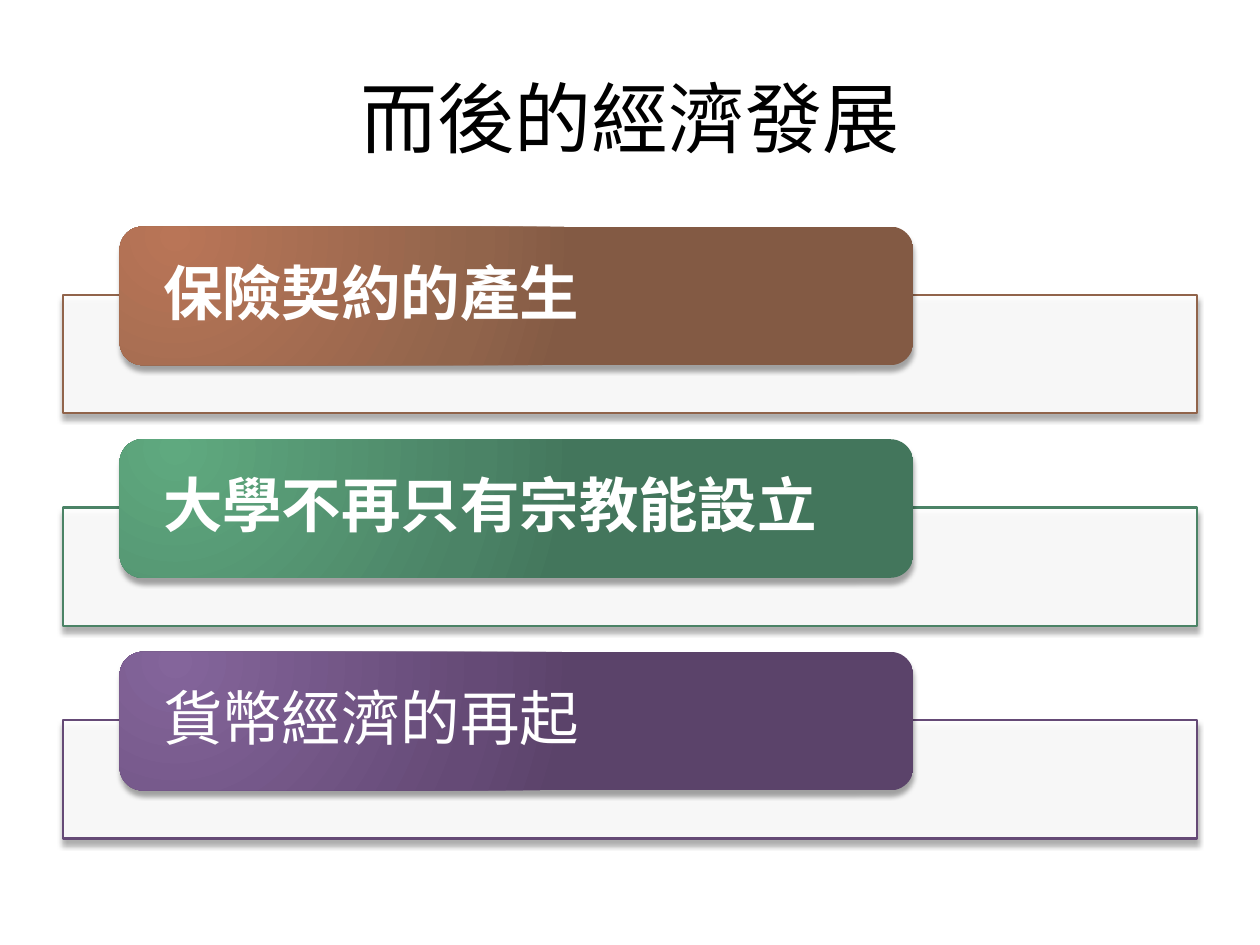
from pptx import Presentation
from pptx.dml.color import RGBColor
from pptx.enum.shapes import MSO_SHAPE
from pptx.enum.text import MSO_ANCHOR, PP_ALIGN
from pptx.oxml import parse_xml
from pptx.oxml.ns import nsdecls, qn
from pptx.util import Pt

RECT, ROUND = MSO_SHAPE.RECTANGLE, MSO_SHAPE.ROUNDED_RECTANGLE
MIDDLE = MSO_ANCHOR.MIDDLE
LEFT, CENTER = PP_ALIGN.LEFT, PP_ALIGN.CENTER
NS = nsdecls("a")
LABEL_FONT = "Noto Sans CJK SC"

TITLE = "而後的經濟發展"
ITEMS = [
    ("保險契約的產生", True, ("B97557", "91644B", "835A44")),
    ("大學不再只有宗教能設立", True, ("5FA97F", "4B8366", "43765C")),
    ("貨幣經濟的再起", False, ("84659B", "654A76", "5B436A")),
]
STOPS = (0, 76, 100)
MARGIN, WIDTH = 36, 648
CARD_LEFT, CARD_TOP, CARD_W, CARD_H = 68.4, 129.5, 453.6, 79.2
BAR_DROP, BAR_H = 39, 67.7
PITCH = 121.5


def rgb(value):
    return RGBColor.from_string(value)


def add_box(s, kind, left, top, width, height):
    sp = s.shapes.add_shape(kind, Pt(left), Pt(top), Pt(width), Pt(height))
    sp.shadow.inherit = False
    sp._element.spPr.find(qn("a:effectLst")).append(parse_xml(
        f'<a:outerShdw {NS} blurRad="{Pt(3)}" dist="{Pt(3)}" dir="5400000" rotWithShape="0">'
        '<a:srgbClr val="000000"><a:alpha val="35000"/></a:srgbClr></a:outerShdw>'))
    return sp


def add_bar(s, top, color):
    sp = add_box(s, RECT, MARGIN, top, WIDTH, BAR_H)
    sp.fill.solid()
    sp.fill.fore_color.rgb = rgb("FFFFFF")
    fill_color = sp._element.spPr.find(qn("a:solidFill"))[0]
    fill_color.append(parse_xml(f'<a:alpha {NS} val="90000"/>'))
    sp.line.color.rgb = rgb(color)
    sp.line.width = Pt(1.25)


def set_radial_fill(sp, colors):
    stops = "".join(
        f'<a:gs pos="{pos * 1000}"><a:srgbClr val="{color}"/></a:gs>'
        for pos, color in zip(STOPS, colors))
    sp.fill.background()
    spPr = sp._element.spPr
    spPr.replace(spPr.find(qn("a:noFill")), parse_xml(
        f'<a:gradFill {NS} rotWithShape="1"><a:gsLst>{stops}</a:gsLst>'
        '<a:path path="circle"><a:fillToRect l="15000" t="15000" r="100000" b="100000"/>'
        '</a:path></a:gradFill>'))


def write(sp, text, size, color, font, align, bold=False):
    tf = sp.text_frame
    tf.word_wrap = True
    tf.vertical_anchor = MIDDLE
    p = tf.paragraphs[0]
    p.alignment = align
    p.font.size = Pt(size)
    p.font.name = font
    p.font.bold = bold
    p.font.color.rgb = rgb(color)
    p.add_run().text = text
    return tf


def add_card(s, top, text, bold, colors):
    sp = add_box(s, ROUND, CARD_LEFT, top, CARD_W, CARD_H)
    set_radial_fill(sp, colors)
    sp.line.fill.background()
    tf = write(sp, text, 34, "FFFFFF", LABEL_FONT, LEFT, bold)
    tf.margin_left = tf.margin_right = Pt(21)
    tf.margin_top = tf.margin_bottom = 0
    tf.paragraphs[0].line_spacing = 0.9


prs = Presentation()
prs.slide_width, prs.slide_height = Pt(720), Pt(540)
s = prs.slides.add_slide(prs.slide_layouts[6])

title = s.shapes.add_textbox(Pt(MARGIN), Pt(21.6), Pt(WIDTH), Pt(90))
write(title, TITLE, 44, "000000", "Calibri", CENTER)

for i, (text, bold, colors) in enumerate(ITEMS):
    top = CARD_TOP + i * PITCH
    add_bar(s, top + BAR_DROP, colors[1])
    add_card(s, top, text, bold, colors)

prs.save("out.pptx")
